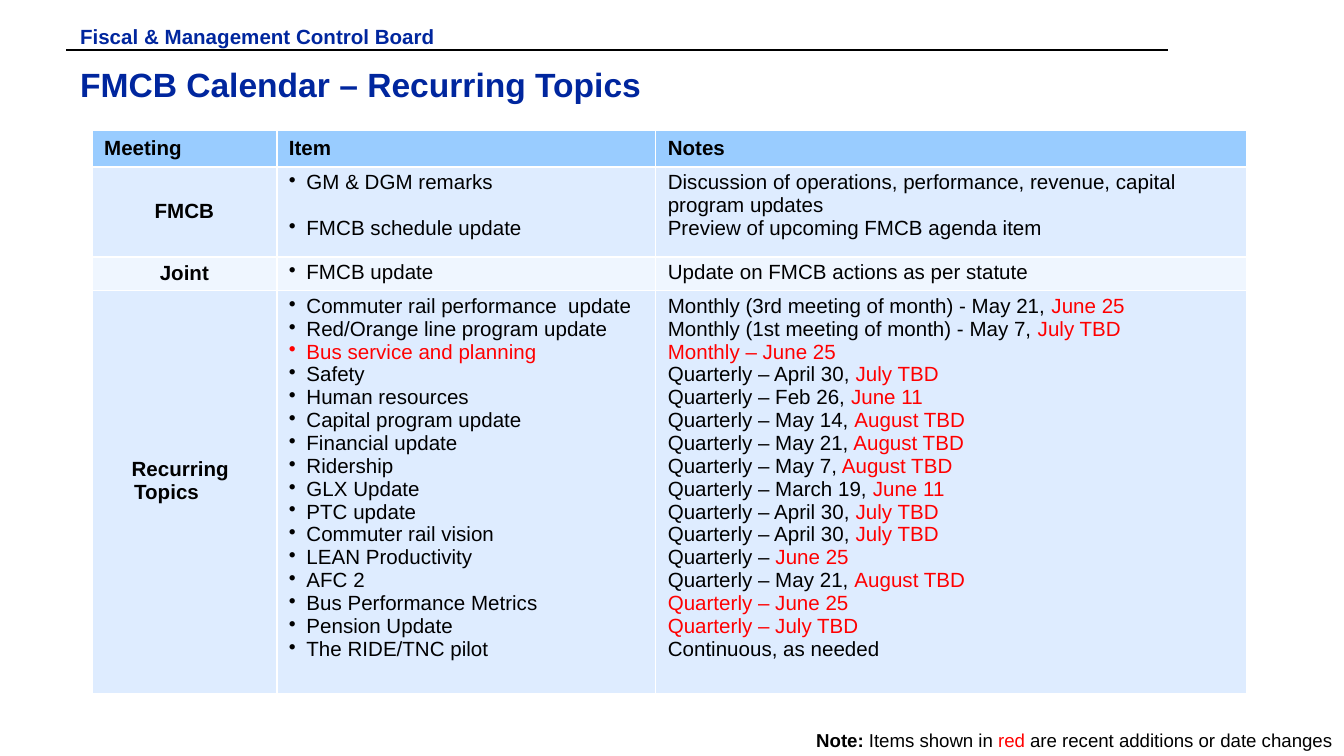
from dataclasses import dataclass
from typing import NamedTuple

from lxml.etree import SubElement
from pptx import Presentation
from pptx.dml.color import RGBColor
from pptx.enum.shapes import MSO_CONNECTOR as Connector
from pptx.enum.text import MSO_ANCHOR as Anchor, PP_ALIGN as Align
from pptx.oxml.ns import qn
from pptx.util import Pt

COLORS = {
    "navy": "00269E",
    "black": "000000",
    "red": "FF0000",
    "header": "99CCFF",
    "band": "DEECFF",
    "light": "EFF6FF",
}
FONT = "Arial"
BODY_SIZE = 11
LINE_HEIGHT = 12.3
BULLET_INDENT = 9.4
SIDE_INSET = 6.5
CELL_INSET = 2.4


class Line(NamedTuple):
    text: str = ""
    red: str = ""
    gap: float = 0
    indent: float = 0


class Topic(NamedTuple):
    item: Line
    note: Line


@dataclass
class Meeting:
    name: list[Line]
    topics: list[Topic]
    height: float
    fill: str
    offset_name: bool = False


@dataclass
class Heading:
    text: str
    top: float
    height: float
    inset: float
    size: float


HEADINGS = [
    Heading("FMCB Calendar – Recurring Topics", 28.8, 34.6, 5.2, 18),
    Heading("Fiscal & Management Control Board", 8.6, 13.7, 4.5, 11),
]
COLUMN_WIDTHS = [99, 203, 316.6]
COLUMN_TITLES = ["Meeting", "Item", "Notes"]
HEADER_HEIGHT = 19.4

MEETINGS = [
    Meeting([Line("FMCB")], [
        Topic(Line("GM & DGM remarks"),
              Line("Discussion of operations, performance, revenue, capital program updates")),
        Topic(Line("FMCB schedule update", gap=LINE_HEIGHT),
              Line("Preview of upcoming FMCB agenda item")),
    ], 48.2, "band"),
    Meeting([Line("Joint")], [
        Topic(Line("FMCB update"), Line("Update on FMCB actions as per statute")),
    ], 17.2, "light"),
    Meeting([Line("Recurring"), Line("Topics", indent=1.4)], [
        Topic(Line("Commuter rail performance  update"),
              Line("Monthly (3rd meeting of month) - May 21, ", "June 25")),
        Topic(Line("Red/Orange line program update"),
              Line("Monthly (1st meeting of month) - May 7, ", "July TBD")),
        Topic(Line(red="Bus service and planning"), Line(red="Monthly – June 25")),
        Topic(Line("Safety"), Line("Quarterly – April 30, ", "July TBD")),
        Topic(Line("Human resources"), Line("Quarterly – Feb 26, ", "June 11")),
        Topic(Line("Capital program update"), Line("Quarterly – May 14, ", "August TBD")),
        Topic(Line("Financial update"), Line("Quarterly – May 21,", " August TBD")),
        Topic(Line("Ridership"), Line("Quarterly – May 7,", " August TBD")),
        Topic(Line("GLX Update"), Line("Quarterly – March 19, ", "June 11")),
        Topic(Line("PTC update"), Line("Quarterly – April 30, ", "July TBD")),
        Topic(Line("Commuter rail vision"), Line("Quarterly – April 30, ", "July TBD")),
        Topic(Line("LEAN Productivity"), Line("Quarterly – ", "June 25")),
        Topic(Line("AFC 2"), Line("Quarterly – May 21, ", "August TBD")),
        Topic(Line("Bus Performance Metrics"), Line(red="Quarterly – June 25")),
        Topic(Line("Pension Update"), Line(red="Quarterly – July TBD")),
        Topic(Line("The RIDE/TNC pilot"), Line("Continuous, as needed")),
    ], 202.3, "band", offset_name=True),
]


def color(name: str) -> RGBColor:
    return RGBColor.from_string(COLORS[name])


def style(font, size: float, color_name: str, bold: bool = False) -> None:
    font.name, font.size, font.bold = FONT, Pt(size), bold
    font.color.rgb = color(color_name)


def set_insets(target, top: float, bottom: float) -> None:
    target.margin_left = target.margin_right = Pt(SIDE_INSET)
    target.margin_top, target.margin_bottom = Pt(top), Pt(bottom)


def add_bullet(paragraph) -> None:
    properties = paragraph._p.get_or_add_pPr()
    properties.set("marL", str(Pt(BULLET_INDENT)))
    properties.set("indent", str(-Pt(BULLET_INDENT)))
    SubElement(properties, qn("a:buChar"), char="•")


def write_line(paragraph, line: Line, bold: bool, bulleted: bool) -> None:
    if bulleted:
        add_bullet(paragraph)
    if line.indent:
        paragraph._p.get_or_add_pPr().set("marL", str(Pt(line.indent)))
    if line.gap:
        paragraph.space_before = Pt(line.gap)
    style(paragraph.font, BODY_SIZE, "black" if line.text else "red", bold)
    if line.text:
        paragraph.add_run().text = line.text
    if line.red:
        run = paragraph.add_run()
        run.text = line.red
        run.font.color.rgb = color("red")


def fill_cell(cell, lines: list[Line], fill: str, bold: bool = False,
              bulleted: bool = False, centered: bool = False) -> None:
    cell.fill.solid()
    cell.fill.fore_color.rgb = color(fill)
    set_insets(cell, CELL_INSET, CELL_INSET)
    cell.vertical_anchor = Anchor.MIDDLE if bold else Anchor.TOP
    frame = cell.text_frame
    for index, line in enumerate(lines):
        paragraph = frame.add_paragraph() if index else frame.paragraphs[0]
        paragraph.alignment = Align.CENTER if centered else Align.LEFT
        write_line(paragraph, line, bold, bulleted)


def add_text_box(slide, left: float, top: float, width: float, height: float, inset: float):
    frame = slide.shapes.add_textbox(Pt(left), Pt(top), Pt(width), Pt(height)).text_frame
    frame.word_wrap = True
    set_insets(frame, inset, 3)
    return frame.paragraphs[0]


def add_heading(slide, heading: Heading) -> None:
    paragraph = add_text_box(slide, 36.4, heading.top, 602, heading.height, heading.inset)
    paragraph.text = heading.text
    style(paragraph.font, heading.size, "navy", True)


def add_rule(slide) -> None:
    rule = slide.shapes.add_connector(Connector.STRAIGHT, Pt(35.4), Pt(26.6), Pt(625.6), Pt(26.6))
    rule.line.color.rgb = color("black")
    rule.line.width = Pt(1)
    SubElement(rule._element.spPr, qn("a:effectLst"))


def add_calendar(slide) -> None:
    heights = [HEADER_HEIGHT] + [meeting.height for meeting in MEETINGS]
    table = slide.shapes.add_table(len(heights), len(COLUMN_WIDTHS), Pt(49.3), Pt(70),
                                   Pt(sum(COLUMN_WIDTHS)), Pt(sum(heights))).table
    for column, width in zip(table.columns, COLUMN_WIDTHS):
        column.width = Pt(width)
    for row, height in zip(table.rows, heights):
        row.height = Pt(height)
    for index, title in enumerate(COLUMN_TITLES):
        fill_cell(table.cell(0, index), [Line(title)], "header", bold=True)
    for index, meeting in enumerate(MEETINGS, start=1):
        name, items, notes = (table.cell(index, column) for column in range(3))
        fill_cell(name, meeting.name, meeting.fill, bold=True, centered=not meeting.offset_name)
        if meeting.offset_name:
            name.margin_left = Pt(21.2)
            name.margin_bottom = Pt(CELL_INSET + LINE_HEIGHT)
        fill_cell(items, [topic.item for topic in meeting.topics], meeting.fill, bulleted=True)
        fill_cell(notes, [topic.note for topic in meeting.topics], meeting.fill)


def add_footnote(slide) -> None:
    paragraph = add_text_box(slide, 417.6, 386.9, 302.4, 18.7, 3.6)
    paragraph.alignment = Align.RIGHT
    style(paragraph.font, 10, "black")
    for text in ("Note: ", "Items shown in ", "red", " are recent additions or date changes"):
        paragraph.add_run().text = text
    label, _, sample, _ = paragraph.runs
    label.font.bold = True
    sample.font.color.rgb = color("red")


def main() -> None:
    presentation = Presentation()
    presentation.slide_width, presentation.slide_height = Pt(720), Pt(405)
    slide = presentation.slides.add_slide(presentation.slide_layouts[6])
    add_rule(slide)
    for heading in HEADINGS:
        add_heading(slide, heading)
    add_calendar(slide)
    add_footnote(slide)
    presentation.save("out.pptx")


if __name__ == "__main__":
    main()
